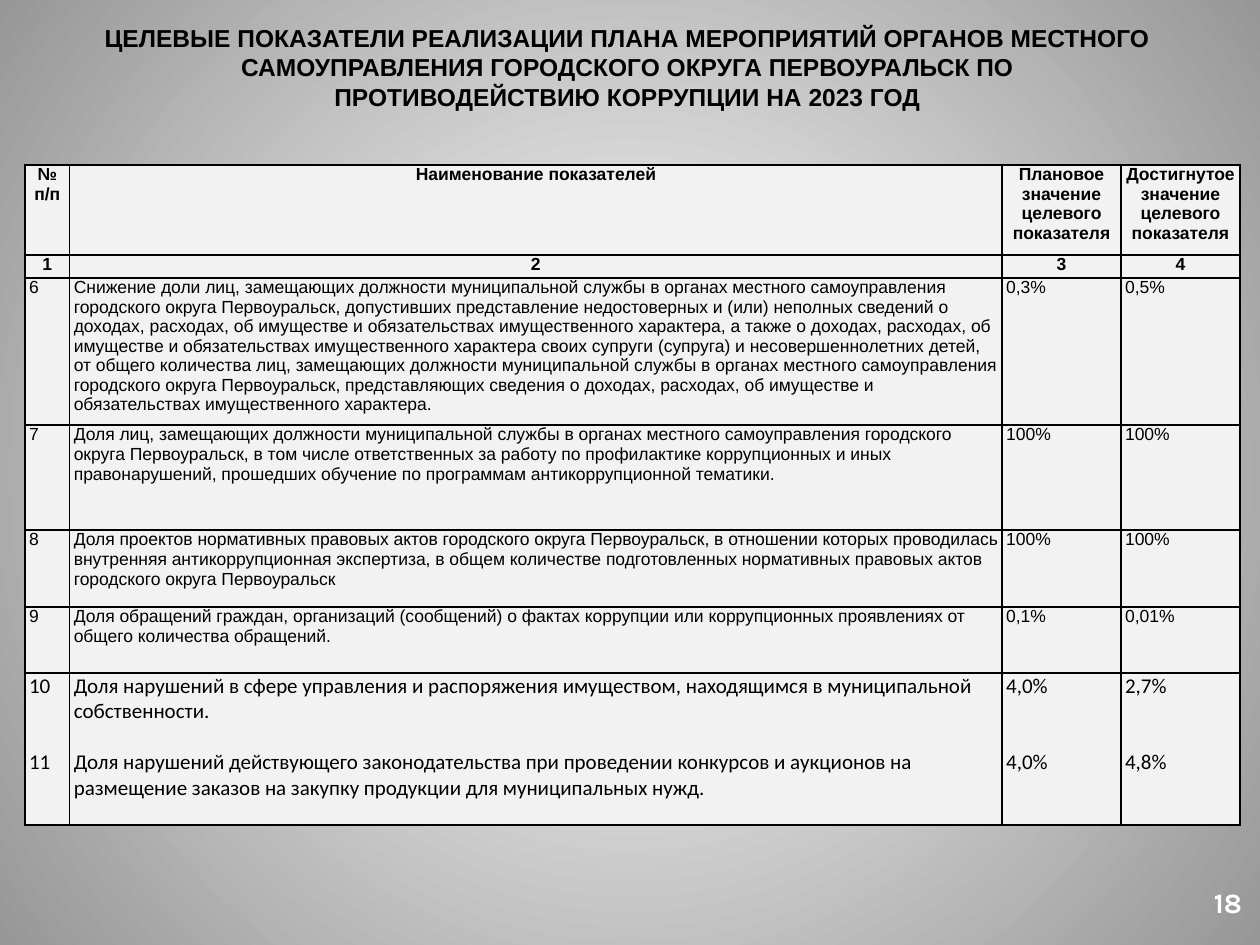
"""Build the slide with the 2023 anti-corruption target indicators."""
from lxml import etree
from pptx import Presentation
from pptx.dml.color import RGBColor
from pptx.enum.text import MSO_ANCHOR, PP_ALIGN
from pptx.oxml.ns import qn
from pptx.util import Pt

CENTER, LEFT = PP_ALIGN.CENTER, PP_ALIGN.LEFT
TOP = MSO_ANCHOR.TOP

COLORS = {
    "ink": "000000",
    "cell": "F2F2F2",
    "page": "FFFFFF",
    "glow": "FFFFFF",
    "edge": "979797",
}

TITLE_FORMAT = {"name": "Arial", "size": Pt(14), "bold": True}
PAGE_FORMAT = {"name": "Karla", "size": Pt(16), "bold": True}
HEAD_FORMAT = {"name": "Arial", "size": Pt(10), "bold": True}
BODY_FORMAT = {"name": "Arial", "size": Pt(10), "bold": False}
LAST_FORMAT = {"name": "Calibri", "size": Pt(12), "bold": False}
CELL_FORMAT = {
    "margin_left": Pt(2.4),
    "margin_right": Pt(2.4),
    "margin_top": 0,
    "margin_bottom": 0,
    "vertical_anchor": TOP,
}

TITLE = [
    "ЦЕЛЕВЫЕ ПОКАЗАТЕЛИ РЕАЛИЗАЦИИ ПЛАНА МЕРОПРИЯТИЙ ОРГАНОВ МЕСТНОГО "
    "САМОУПРАВЛЕНИЯ ГОРОДСКОГО ОКРУГА ПЕРВОУРАЛЬСК ПО",
    "ПРОТИВОДЕЙСТВИЮ КОРРУПЦИИ НА 2023 ГОД",
]
HEADER_ROWS = [
    [["№", "п/п"], ["Наименование показателей"],
     ["Плановое значение целевого показателя"],
     ["Достигнутое значение целевого показателя"]],
    [["1"], ["2"], ["3"], ["4"]],
]
INDICATOR_ROWS = [
    [["6"],
     ["Снижение доли лиц, замещающих должности муниципальной службы в органах "
      "местного самоуправления городского округа Первоуральск, допустивших "
      "представление недостоверных и (или) неполных сведений о доходах, "
      "расходах, об имуществе и обязательствах имущественного характера, а "
      "также о доходах, расходах, об имуществе и обязательствах "
      "имущественного характера своих супруги (супруга) и несовершеннолетних "
      "детей, от общего количества лиц, замещающих должности муниципальной "
      "службы в органах местного самоуправления городского округа "
      "Первоуральск, представляющих сведения о доходах, расходах, об "
      "имуществе и обязательствах имущественного характера."],
     ["0,3%"], ["0,5%"]],
    [["7"],
     ["Доля лиц, замещающих должности муниципальной службы в органах местного "
      "самоуправления городского округа Первоуральск, в том числе "
      "ответственных за работу по профилактике коррупционных и иных "
      "правонарушений, прошедших обучение по программам антикоррупционной "
      "тематики."],
     ["100%"], ["100%"]],
    [["8"],
     ["Доля проектов нормативных правовых актов городского округа "
      "Первоуральск, в отношении которых проводилась внутренняя "
      "антикоррупционная экспертиза, в общем количестве подготовленных "
      "нормативных правовых актов городского округа Первоуральск"],
     ["100%"], ["100%"]],
    [["9"],
     ["Доля обращений граждан, организаций (сообщений) о фактах коррупции или "
      "коррупционных проявлениях от общего количества обращений."],
     ["0,1%"], ["0,01%"]],
]
LAST_ROW = [
    ["10", "11"],
    ["Доля нарушений в сфере управления и распоряжения имуществом, "
     "находящимся в муниципальной собственности.",
     "Доля нарушений действующего законодательства при проведении конкурсов и "
     "аукционов на размещение заказов на закупку продукции для муниципальных "
     "нужд."],
    ["4,0%", "4,0%"],
    ["2,7%", "4,8%"],
]
COLUMN_WIDTHS = [25.6, 532.8, 68, 68]
ROW_HEIGHTS = [51.4, 13.1, 84, 60, 44, 37.7, 86.9]
LAST_LINE = 14.65


def rgb(name):
    """Return the named colour."""
    return RGBColor.from_string(COLORS[name])


def apply_format(target, values):
    """Set every attribute given in values on target."""
    for attribute, value in values.items():
        setattr(target, attribute, value)


def write_paragraphs(frame, texts, font_format, color, align, gap=0):
    """Write the texts as paragraphs, with a gap before each but the first."""
    for index, text in enumerate(texts):
        paragraph = frame.add_paragraph() if index else frame.paragraphs[0]
        paragraph.alignment = align
        paragraph.space_before = Pt(gap if index else 0)
        run = paragraph.add_run()
        run.text = text
        apply_format(run.font, font_format)
        run.font.color.rgb = rgb(color)


def paint_background(slide):
    """Fill the background with a circular gradient from the centre."""
    fill = slide.background.fill
    fill.gradient()
    for stop, color, position in zip(fill.gradient_stops, ("glow", "edge"), (0, 1)):
        stop.color.rgb = rgb(color)
        stop.position = position
    gradient = next(slide.element.iter(qn("a:gradFill")))
    linear = gradient.find(qn("a:lin"))
    circle = etree.Element(qn("a:path"), path="circle")
    sides = dict.fromkeys("ltrb", "50000")
    etree.SubElement(circle, qn("a:fillToRect"), sides)
    gradient.replace(linear, circle)


def add_text(slide, box, texts, font_format, color):
    """Add a centred, wrapping text box."""
    frame = slide.shapes.add_textbox(*map(Pt, box)).text_frame
    frame.word_wrap = True
    write_paragraphs(frame, texts, font_format, color, CENTER)


def add_borders(cell):
    """Draw a thin line on the four sides of a cell."""
    properties = cell._tc.get_or_add_tcPr()
    for index, side in enumerate(("lnL", "lnR", "lnT", "lnB")):
        line = etree.Element(qn(f"a:{side}"), w=str(Pt(1)))
        solid = etree.SubElement(line, qn("a:solidFill"))
        etree.SubElement(solid, qn("a:srgbClr"), val=COLORS["ink"])
        properties.insert(index, line)


def fill_row(row, contents, font_format, align, line=0):
    """Fill a row; line is the line height that levels its second entries."""
    for column, (cell, texts) in enumerate(zip(row.cells, contents)):
        apply_format(cell, CELL_FORMAT)
        cell.fill.solid()
        cell.fill.fore_color.rgb = rgb("cell")
        gap = line if column == 1 else 2 * line
        write_paragraphs(cell.text_frame, texts, font_format, "ink", align, gap)
        add_borders(cell)


def add_indicator_table(slide):
    """Add the table of indicators with planned and achieved values."""
    frame = slide.shapes.add_table(
        len(ROW_HEIGHTS), len(COLUMN_WIDTHS), Pt(14.2), Pt(94.3),
        Pt(sum(COLUMN_WIDTHS)), Pt(sum(ROW_HEIGHTS)))
    table = frame.table
    for column, width in zip(table.columns, COLUMN_WIDTHS):
        column.width = Pt(width)
    for row, height in zip(table.rows, ROW_HEIGHTS):
        row.height = Pt(height)
    rows = iter(table.rows)
    for contents in HEADER_ROWS:
        fill_row(next(rows), contents, HEAD_FORMAT, CENTER)
    for contents in INDICATOR_ROWS:
        fill_row(next(rows), contents, BODY_FORMAT, LEFT)
    fill_row(next(rows), LAST_ROW, LAST_FORMAT, LEFT, LAST_LINE)


def main():
    """Build and save the presentation."""
    presentation = Presentation()
    presentation.slide_width, presentation.slide_height = Pt(720), Pt(540)
    slide = presentation.slides.add_slide(presentation.slide_layouts[6])
    paint_background(slide)
    add_text(slide, (683.3, 502.6, 36.7, 26.6), ["18"], PAGE_FORMAT, "page")
    add_text(slide, (41, 9.4, 635, 58.3), TITLE, TITLE_FORMAT, "ink")
    add_indicator_table(slide)
    presentation.save("out.pptx")


if __name__ == "__main__":
    main()
